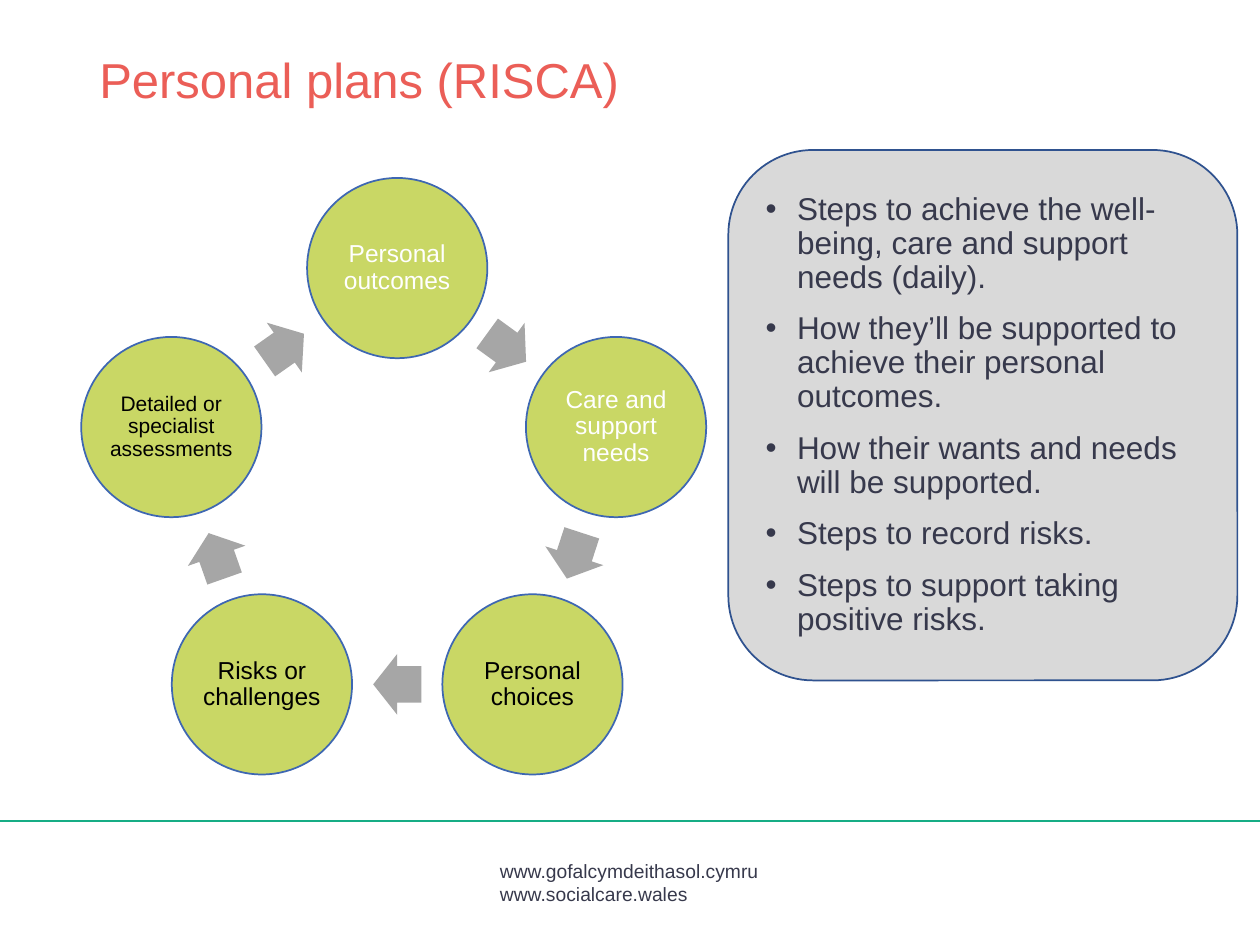
import math
import pptx
import pptx.util
import pptx.dml.color
import pptx.enum.shapes
import pptx.enum.text
import pptx.oxml.ns
from lxml import etree

Pt = pptx.util.Pt
SHAPES = pptx.enum.shapes.MSO_SHAPE
ALIGN = pptx.enum.text.PP_ALIGN
ANCHOR = pptx.enum.text.MSO_ANCHOR

TITLE = "Personal plans (RISCA)"
FOOTER = ["www.gofalcymdeithasol.cymru", "www.socialcare.wales"]
STAGES = [
    ("Personal outcomes", 14, "FFFFFF", 0),
    ("Care and support needs", 14, "FFFFFF", 0),
    ("Personal choices", 14, "000000", 0),
    ("Risks or challenges", 14, "000000", 0),
    ("Detailed or specialist assessments", 12, "000000", -4),
]
STEPS = [
    "Steps to achieve the well-being, care and support needs (daily).",
    "How they’ll be supported to achieve their personal outcomes.",
    "How their wants and needs will be supported.",
    "Steps to record risks.",
    "Steps to support taking positive risks.",
]
INK = "37394C"
CYCLE_X, CYCLE_Y, CYCLE_RADIUS = 227, 284.7, 131.5
CIRCLE_SIZE = 103
ARROW_WIDTH, ARROW_HEIGHT = 27.5, 34.8


def rgb(code):
    return pptx.dml.color.RGBColor.from_string(code)


def add_shape(page, kind, left, top, width, height, fill, line=None):
    shape = page.shapes.add_shape(kind, Pt(left), Pt(top), Pt(width), Pt(height))
    shape.shadow.inherit = False
    shape.fill.solid()
    shape.fill.fore_color.rgb = rgb(fill)
    if line:
        shape.line.color.rgb = rgb(line)
        shape.line.width = Pt(1)
    else:
        shape.line.fill.background()
    return shape


def add_bullet(para):
    properties = para._p.get_or_add_pPr()
    properties.set("marL", str(Pt(18)))
    properties.set("indent", str(-Pt(18)))
    for tag, name, value in (("a:buFont", "typeface", "Arial"), ("a:buChar", "char", "•")):
        etree.SubElement(properties, pptx.oxml.ns.qn(tag)).set(name, value)


def write(shape, lines, size, color, align=ALIGN.LEFT, anchor=ANCHOR.TOP,
          spacing=0.9, before=0, bullets=False):
    frame = shape.text_frame
    frame.word_wrap = True
    frame.vertical_anchor = anchor
    for index, line in enumerate(lines):
        para = frame.paragraphs[0] if index == 0 else frame.add_paragraph()
        para.text = line
        para.alignment = align
        para.line_spacing = spacing
        para.space_before = Pt(before if index else 0)
        if bullets:
            add_bullet(para)
        para.font.name = "Arial"
        para.font.size = Pt(size)
        para.font.color.rgb = rgb(color)


def add_text(page, left, top, width, height, lines, size, color, spacing):
    box = page.shapes.add_textbox(Pt(left), Pt(top), Pt(width), Pt(height))
    write(box, lines, size, color, spacing=spacing)


def add_rule(page):
    rule = page.shapes.add_connector(
        pptx.enum.shapes.MSO_CONNECTOR.STRAIGHT, Pt(0), Pt(469.2), Pt(720), Pt(469.2))
    rule.line.color.rgb = rgb("16AD85")
    rule.line.width = Pt(1)
    etree.SubElement(rule._element.spPr, pptx.oxml.ns.qn("a:effectLst"))


def add_cycle(page):
    centers = []
    for index, (label, size, color, shift) in enumerate(STAGES):
        angle = math.tau * index / len(STAGES)
        x = CYCLE_X + CYCLE_RADIUS * math.sin(angle) + shift
        y = CYCLE_Y - CYCLE_RADIUS * math.cos(angle)
        centers.append((x, y))
        circle = add_shape(page, SHAPES.OVAL, x - CIRCLE_SIZE / 2, y - CIRCLE_SIZE / 2,
                           CIRCLE_SIZE, CIRCLE_SIZE, "C9D765", "3E67B2")
        frame = circle.text_frame
        frame.margin_left = frame.margin_right = Pt(1.4)
        frame.margin_top = frame.margin_bottom = Pt(1.4)
        write(circle, [label], size, color, ALIGN.CENTER, ANCHOR.MIDDLE)
    for (x1, y1), (x2, y2) in zip(centers, centers[1:] + centers[:1]):
        arrow = add_shape(page, SHAPES.RIGHT_ARROW, (x1 + x2 - ARROW_WIDTH) / 2,
                          (y1 + y2 - ARROW_HEIGHT) / 2, ARROW_WIDTH, ARROW_HEIGHT, "A6A6A6")
        arrow.adjustments[0] = 0.6
        arrow.adjustments[1] = 0.5
        arrow.rotation = math.degrees(math.atan2(y2 - y1, x2 - x1)) % 360


def main():
    deck = pptx.Presentation()
    deck.slide_width, deck.slide_height = Pt(720), Pt(540)
    page = deck.slides.add_slide(deck.slide_layouts[6])
    add_text(page, 278.6, 487.4, 162.7, 33.1, FOOTER, 11, INK, 1.0)
    add_rule(page)
    add_text(page, 49.7, 28.8, 354.2, 81.4, [TITLE], 28, "EB5E57", 0.9)
    add_cycle(page)
    panel = add_shape(page, SHAPES.ROUNDED_RECTANGLE, 416.2, 85.7, 290.9, 303.1,
                      "D9D9D9", "2F528F")
    write(panel, STEPS, 18, INK, anchor=ANCHOR.MIDDLE, before=10, bullets=True)
    deck.save("out.pptx")


if __name__ == "__main__":
    main()
